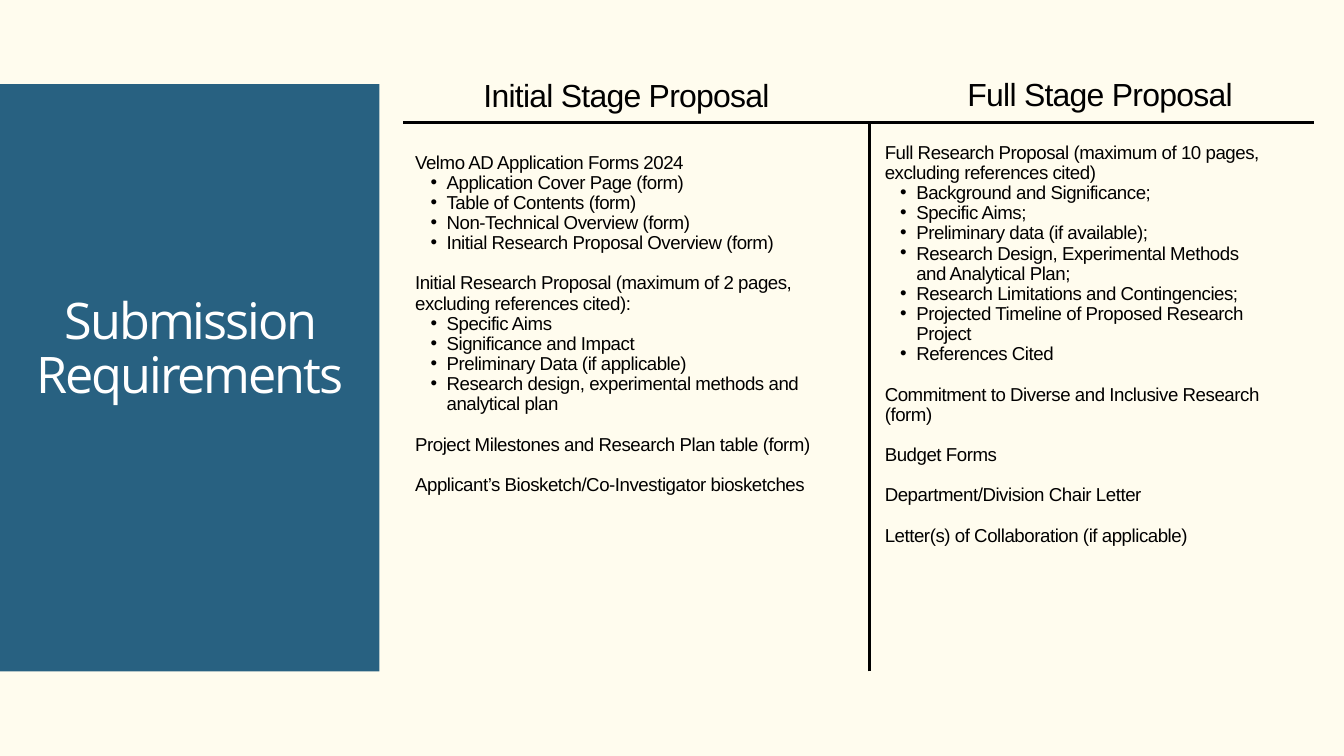
from lxml.etree import SubElement
from pptx import Presentation
from pptx.dml.color import RGBColor
from pptx.enum.shapes import MSO_CONNECTOR as Connector, MSO_SHAPE as Shape
from pptx.enum.text import PP_ALIGN as Align
from pptx.oxml.ns import qn
from pptx.util import Pt

EMU_PER_PX = 9525
CREAM = RGBColor(0xFF, 0xFC, 0xEE)
BLUE = RGBColor(0x28, 0x61, 0x81)
BLACK = RGBColor(0, 0, 0)
WHITE = RGBColor(0xFF, 0xFF, 0xFF)

INITIAL_SECTIONS = [
    ("Velmo AD Application Forms 2024", [
        "Application Cover Page (form)",
        "Table of Contents (form)",
        "Non-Technical Overview (form)",
        "Initial Research Proposal Overview (form)",
    ]),
    ("Initial Research Proposal (maximum of 2 pages, excluding references cited):", [
        "Specific Aims",
        "Significance and Impact",
        "Preliminary Data (if applicable)",
        "Research design, experimental methods and analytical plan",
    ]),
    ("Project Milestones and Research Plan table (form)", []),
    ("Applicant’s Biosketch/Co-Investigator biosketches", []),
]
FULL_SECTIONS = [
    ("Full Research Proposal (maximum of 10 pages, excluding references cited)", [
        "Background and Significance;",
        "Specific Aims;",
        "Preliminary data (if available);",
        "Research Design, Experimental Methods and Analytical Plan;",
        "Research Limitations and Contingencies;",
        "Projected Timeline of Proposed Research Project",
        "References Cited",
    ]),
    ("Commitment to Diverse and Inclusive Research (form)", []),
    ("Budget Forms", []),
    ("Department/Division Chair Letter", []),
    ("Letter(s) of Collaboration (if applicable)", []),
]


def px(*lengths):
    return [round(length * EMU_PER_PX) for length in lengths]


class Page:
    title_font = "Open Sans"
    body_font = "Arial"
    body_leading = 21.6

    def __init__(self, deck):
        self.slide = deck.slides.add_slide(deck.slide_layouts[6])
        fill = self.slide.background.fill
        fill.solid()
        fill.fore_color.rgb = CREAM

    def panel(self, left, top, width, height):
        box = self.slide.shapes.add_shape(Shape.RECTANGLE, *px(left, top, width, height))
        box.shadow.inherit = False
        box.fill.solid()
        box.fill.fore_color.rgb = BLUE
        box.line.fill.background()

    def rule(self, x1, y1, x2, y2):
        line = self.slide.shapes.add_connector(Connector.STRAIGHT, *px(x1, y1, x2, y2))
        line.line.color.rgb = BLACK
        line.line.width = Pt(3)
        SubElement(line._element.spPr, qn("a:effectLst"))

    def frame(self, left, top, width, height):
        box = self.slide.shapes.add_textbox(*px(left, top, width, height))
        frame = box.text_frame
        frame.word_wrap = True
        frame.margin_left = frame.margin_top = frame.margin_right = frame.margin_bottom = 0
        return frame

    def style(self, para, font, size, color, leading, tracking):
        para.line_spacing = Pt(leading)
        for span in para.runs:
            span.font.name = font
            span.font.size = Pt(size)
            span.font.color.rgb = color
            span._r.get_or_add_rPr().set("spc", str(tracking))

    def title(self, text, *bounds):
        para = self.frame(*bounds).paragraphs[0]
        para.text = text
        para.alignment = Align.CENTER
        self.style(para, self.title_font, 54, WHITE, 58.3, -220)

    def heading(self, text, *bounds):
        para = self.frame(*bounds).paragraphs[0]
        para.text = text
        para.alignment = Align.CENTER
        self.style(para, self.body_font, 34.2, BLACK, 37, -80)

    def bullet(self, para):
        para.level = 1
        props = para._p.get_or_add_pPr()
        margin, indent = px(45, -23)
        props.set("marL", str(margin))
        props.set("indent", str(indent))
        SubElement(props, qn("a:buFont")).set("typeface", self.body_font)
        SubElement(props, qn("a:buChar")).set("char", "•")

    def sections(self, sections, *bounds):
        frame = self.frame(*bounds)
        for number, (lead, items) in enumerate(sections):
            para = frame.add_paragraph() if number else frame.paragraphs[0]
            para.text = lead
            self.style(para, self.body_font, 20, BLACK, self.body_leading, -50)
            if number:
                para.space_before = Pt(self.body_leading)
            for item in items:
                para = frame.add_paragraph()
                para.text = item
                self.style(para, self.body_font, 20, BLACK, self.body_leading, -50)
                self.bullet(para)


def main():
    deck = Presentation()
    deck.slide_width, deck.slide_height = px(1920, 1080)
    page = Page(deck)
    page.panel(0, 120, 542, 839)
    page.rule(576, 175, 1877, 175)
    page.rule(1242, 959, 1242, 175)
    page.title("Submission Requirements", 33, 421, 477, 156)
    page.heading("Initial Stage Proposal", 587, 113, 616, 48)
    page.heading("Full Stage Proposal", 1325, 112, 493, 50)
    page.sections(INITIAL_SECTIONS, 593, 218, 627, 563)
    page.sections(FULL_SECTIONS, 1264, 204, 548, 682)
    deck.save("out.pptx")


if __name__ == "__main__":
    main()
